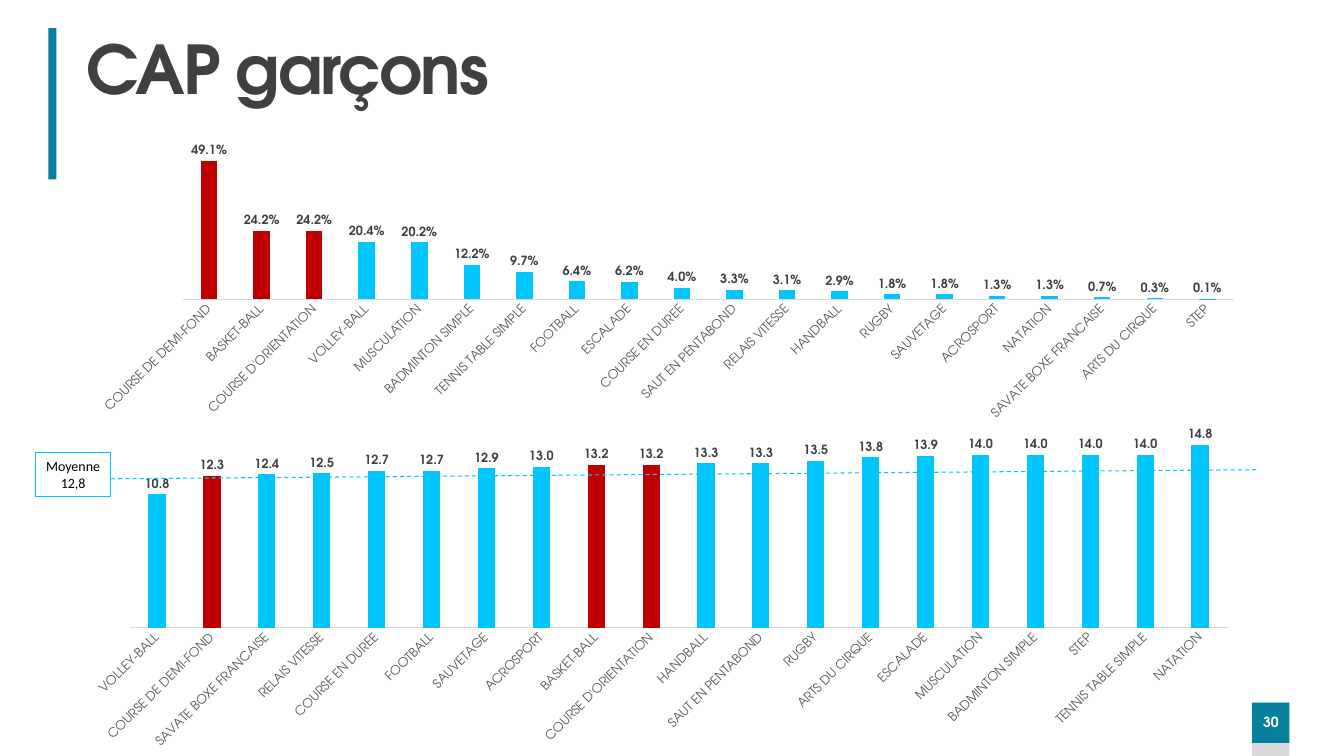
"""Build the slide on sports activities chosen by boys in the CAP diploma."""
from lxml import etree
from pptx import Presentation
from pptx import util as u
from pptx.chart import data as chart_data
from pptx.dml import color
from pptx.enum import chart as charts, dml, shapes, text
from pptx.oxml import ns

TEAL = color.RGBColor(0x06, 0x7F, 0x9C)
SKY = color.RGBColor(0x01, 0xC6, 0xFD)
RED = color.RGBColor(0xC0, 0x00, 0x00)
DARK = color.RGBColor(0x40, 0x40, 0x40)
GREY = color.RGBColor(0x59, 0x59, 0x59)
LIGHT = color.RGBColor(0xD9, 0xD9, 0xD9)
WHITE = color.RGBColor(0xFF, 0xFF, 0xFF)
BLACK = color.RGBColor(0x00, 0x00, 0x00)
ADVENTOR = "TeX Gyre Adventor"
HIGHLIGHTED = {"COURSE DE DEMI-FOND", "BASKET-BALL", "COURSE D'ORIENTATION"}

CHOICES = {
    "COURSE DE DEMI-FOND": 0.491, "BASKET-BALL": 0.242,
    "COURSE D'ORIENTATION": 0.242, "VOLLEY-BALL": 0.204,
    "MUSCULATION": 0.202, "BADMINTON SIMPLE": 0.122,
    "TENNIS TABLE SIMPLE": 0.097, "FOOTBALL": 0.064, "ESCALADE": 0.062,
    "COURSE EN DUREE": 0.04, "SAUT EN PENTABOND": 0.033,
    "RELAIS VITESSE": 0.031, "HANDBALL": 0.029, "RUGBY": 0.018,
    "SAUVETAGE": 0.018, "ACROSPORT": 0.013, "NATATION": 0.013,
    "SAVATE BOXE FRANCAISE": 0.007, "ARTS DU CIRQUE": 0.003, "STEP": 0.001,
}
MARKS = {
    "VOLLEY-BALL": 10.8, "COURSE DE DEMI-FOND": 12.3,
    "SAVATE BOXE FRANCAISE": 12.4, "RELAIS VITESSE": 12.5,
    "COURSE EN DUREE": 12.7, "FOOTBALL": 12.7, "SAUVETAGE": 12.9,
    "ACROSPORT": 13, "BASKET-BALL": 13.2, "COURSE D'ORIENTATION": 13.2,
    "HANDBALL": 13.3, "SAUT EN PENTABOND": 13.3, "RUGBY": 13.5,
    "ARTS DU CIRQUE": 13.8, "ESCALADE": 13.9, "MUSCULATION": 14,
    "BADMINTON SIMPLE": 14, "STEP": 14, "TENNIS TABLE SIMPLE": 14,
    "NATATION": 14.8,
}


def inches(*lengths):
    return [u.Inches(length) for length in lengths]


def apply(target, **values):
    for name, value in values.items():
        setattr(target, name, value)


def paint(target, colour):
    target.fill.solid()
    target.fill.fore_color.rgb = colour


def style_font(font, size, colour, name=ADVENTOR, bold=False):
    apply(font, size=u.Pt(size), name=name, bold=bold)
    font.color.rgb = colour


def style_line(line, colour):
    line.color.rgb = colour
    line.width = u.Pt(0.75)


class SlideBuilder:
    def __init__(self, slide):
        self.slide = slide

    def label(self, shape, words, size, colour, name=ADVENTOR, bold=True,
              tracking=None, frame=None, paragraph=None):
        apply(shape.text_frame, **{"word_wrap": True, **(frame or {})})
        line = shape.text_frame.paragraphs[0]
        apply(line, **(paragraph or {}))
        run = line.add_run()
        run.text = words
        style_font(run.font, size, colour, name, bold)
        if tracking:
            run.font._element.set("spc", str(int(tracking * 100)))

    def title(self, box, words):
        heading = self.slide.shapes.add_textbox(*inches(*box))
        self.label(heading, words, 48, DARK, tracking=-1.5,
                   frame={"vertical_anchor": text.MSO_ANCHOR.MIDDLE},
                   paragraph={"line_spacing": 0.9})

    def rectangle(self, box, fill=None, outline=None):
        panel = self.slide.shapes.add_shape(
            shapes.MSO_SHAPE.RECTANGLE, *inches(*box))
        panel.shadow.inherit = False
        if fill is None:
            panel.fill.background()
        else:
            paint(panel, fill)
        if outline is None:
            panel.line.fill.background()
        else:
            style_line(panel.line, outline)
        return panel

    def dashed_line(self, start, end):
        average = self.slide.shapes.add_connector(
            shapes.MSO_CONNECTOR.STRAIGHT, *inches(*start, *end))
        style_line(average.line, SKY)
        average.line.dash_style = dml.MSO_LINE.DASH
        etree.SubElement(average._element.spPr, ns.qn("a:effectLst"))

    def columns(self, box, values, number_format, maximum, plot_box):
        activities = chart_data.CategoryChartData(number_format)
        activities.categories = list(values)
        activities.add_series("Series 1", list(values.values()))
        chart = self.slide.shapes.add_chart(
            charts.XL_CHART_TYPE.COLUMN_CLUSTERED, *inches(*box),
            activities).chart
        apply(chart, has_legend=False, has_title=False)
        style_font(chart.font, 10, BLACK)
        apply(chart.value_axis, minimum_scale=0, maximum_scale=maximum,
              has_major_gridlines=False, visible=False)
        self.category_axis(chart.category_axis)

        plot = chart.plots[0]
        apply(plot, gap_width=219, overlap=-27, vary_by_categories=False,
              has_data_labels=True)
        apply(plot.data_labels, show_value=True, number_format=number_format,
              number_format_is_linked=False,
              position=charts.XL_LABEL_POSITION.OUTSIDE_END)
        style_font(plot.data_labels.font, 9, DARK, bold=True)
        bars = plot.series[0]
        paint(bars.format, SKY)
        for index, activity in enumerate(values):
            if activity in HIGHLIGHTED:
                paint(bars.points[index].format, RED)
        self.place_plot(chart, plot_box)

    def category_axis(self, axis):
        apply(axis, major_tick_mark=charts.XL_TICK_MARK.NONE,
              minor_tick_mark=charts.XL_TICK_MARK.NONE)
        style_font(axis.tick_labels.font, 9, GREY)
        style_line(axis.format.line, LIGHT)
        body = axis._element.find(".//" + ns.qn("a:bodyPr"))
        rotation = {"rot": "-2700000", "vert": "horz"}
        for name, value in rotation.items():
            body.set(name, value)

    def place_plot(self, chart, plot_box):
        area = chart._chartSpace.find(".//" + ns.qn("c:plotArea"))
        layout = area.find(ns.qn("c:layout"))
        if layout is None:
            layout = etree.Element(ns.qn("c:layout"))
            area.insert(0, layout)
        manual = etree.SubElement(layout, ns.qn("c:manualLayout"))
        settings = {"layoutTarget": "inner", "xMode": "edge", "yMode": "edge",
                    **dict(zip("xywh", plot_box))}
        for name, value in settings.items():
            etree.SubElement(manual, ns.qn("c:" + name), val=str(value))


def main():
    deck = Presentation()
    apply(deck, slide_width=u.Inches(13.33), slide_height=u.Inches(7.5))
    builder = SlideBuilder(deck.slides.add_slide(deck.slide_layouts[6]))
    centred = {"alignment": text.PP_ALIGN.CENTER}
    middle = {"vertical_anchor": text.MSO_ANCHOR.MIDDLE}

    builder.rectangle((0.48, 0.28, 0.08, 1.5), TEAL)
    builder.rectangle((12.42, 6.97, 0.37, 0.53), LIGHT)
    page_number = builder.rectangle((12.42, 6.97, 0.37, 0.4), TEAL)
    builder.label(page_number, "30", 10, WHITE,
                  frame={**middle, "margin_left": 0, "margin_right": 0},
                  paragraph={**centred, "line_spacing": 0.9})
    builder.title((0.76, 0.31, 12.24, 0.82), "CAP garçons")

    builder.columns((0.76, 1.23, 11.71, 3), CHOICES, "0.0%", 0.6,
                    (0.09, 0.02, 0.89, 0.56))
    builder.columns((0.7, 4.2, 11.71, 3.27), MARKS, "0.0", 16,
                    (0.05, 0.02, 0.93, 0.6))

    builder.dashed_line((1.1, 4.75), (12.47, 4.66))
    average_box = builder.rectangle((0.35, 4.49, 0.75, 0.44), outline=SKY)
    builder.label(average_box, "Moyenne 12,8", 10, BLACK, "Calibri", False,
                  frame=middle, paragraph=centred)
    deck.save("out.pptx")


if __name__ == "__main__":
    main()
